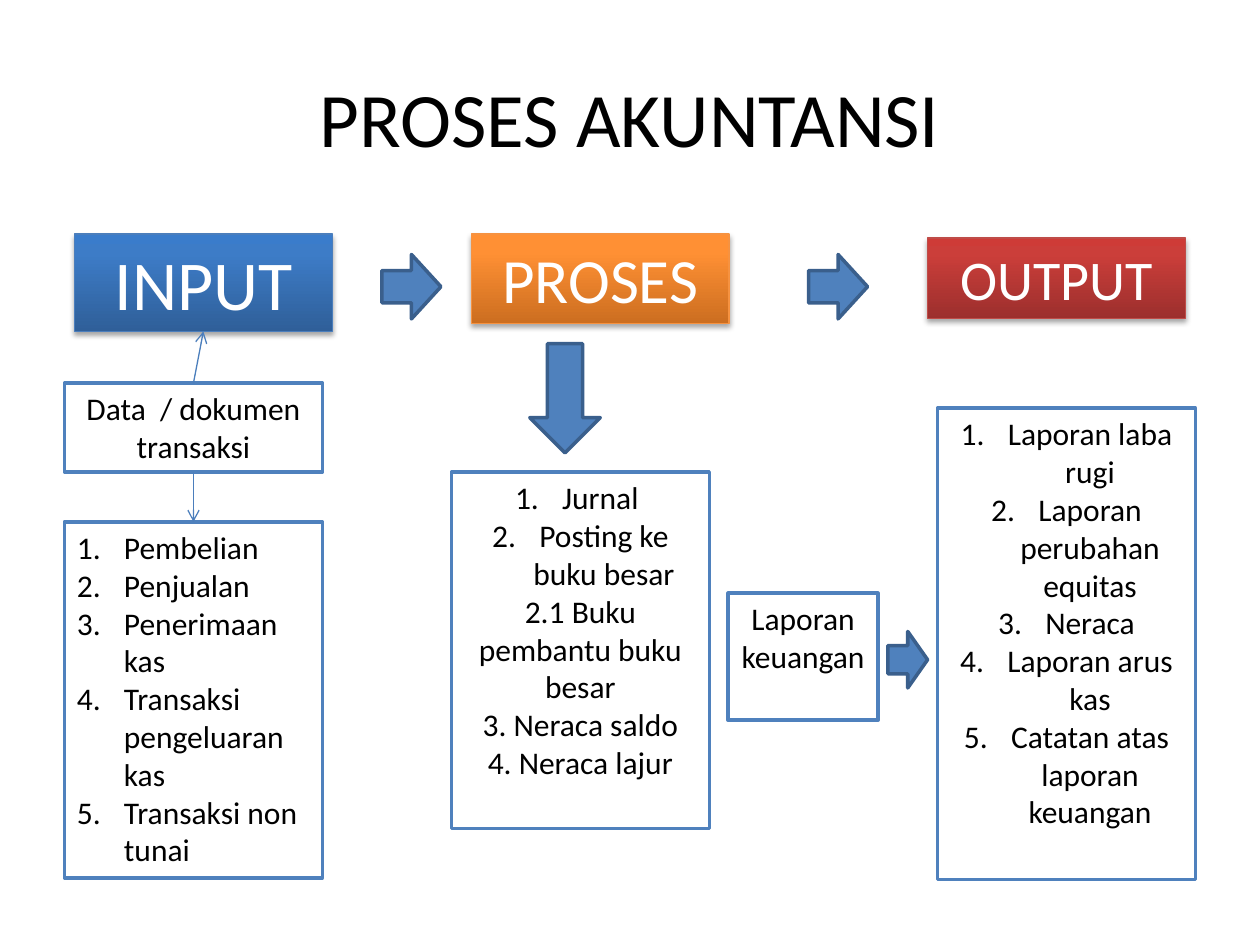
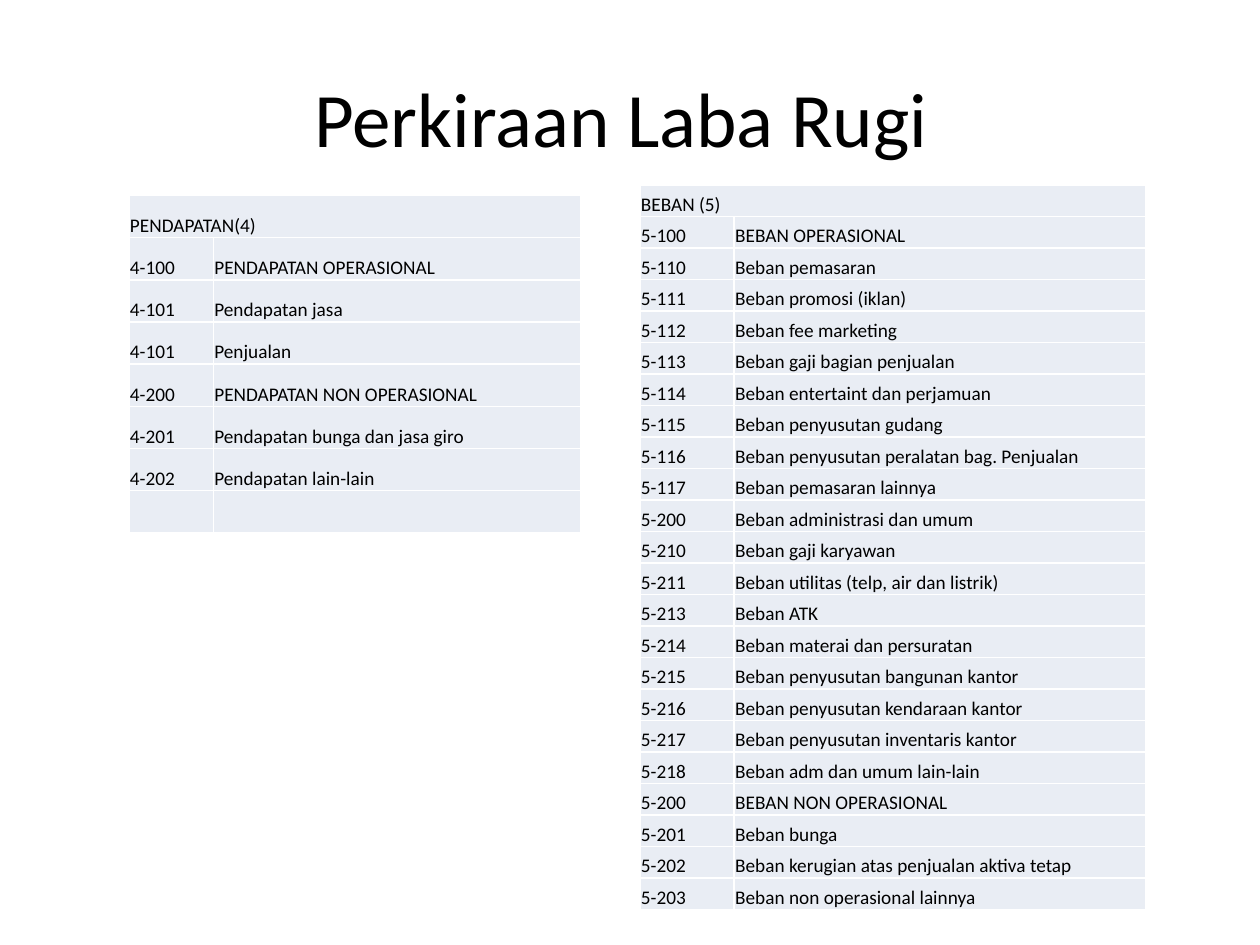
"""Builds two slides: the accounting process and the profit and loss accounts."""
import copy

import pptx
import pptx.dml.color
import pptx.enum.shapes
import pptx.enum.text
import pptx.oxml
import pptx.oxml.ns
import pptx.util

Cm = pptx.util.Cm
Pt = pptx.util.Pt
RGB = pptx.dml.color.RGBColor.from_string
KIND = pptx.enum.shapes.MSO_SHAPE
ALIGN = pptx.enum.text.PP_ALIGN
ANCHOR = pptx.enum.text.MSO_ANCHOR
qn = pptx.oxml.ns.qn
NS = pptx.oxml.ns.nsdecls("a")

HUES = {
    "text": "000000",
    "white": "FFFFFF",
    "blue": "4F81BD",
    "edge": "3A5F8C",
    "link": "4B7EBC",
    "cell": "E9EDF4",
}
FONT = "Calibri"


def write(para, text, size, hue="text", align=ALIGN.CENTER):
    para.alignment = align
    run = para.add_run()
    run.text = text
    run.font.name = FONT
    run.font.size = Pt(size)
    run.font.color.rgb = RGB(HUES[hue])


def draw(kind, spot, fill, line, width):
    shape = slide.shapes.add_shape(kind, *[Cm(n) for n in spot])
    shape.shadow.inherit = False
    shape.fill.solid()
    shape.fill.fore_color.rgb = RGB(fill)
    shape.line.color.rgb = RGB(line)
    shape.line.width = Pt(width)
    shape.text_frame.word_wrap = True
    shape.text_frame.vertical_anchor = ANCHOR.TOP
    return shape


deck = pptx.Presentation()
deck.slide_width = Cm(25.4)
deck.slide_height = Cm(19.05)

pages = []
for name in ["PROSES AKUNTANSI", "Perkiraan Laba Rugi "]:
    slide = deck.slides.add_slide(deck.slide_layouts[5])
    title = slide.shapes.title
    title.left, title.top = Cm(1.27), Cm(0.76)
    title.width, title.height = Cm(22.86), Cm(3.18)
    title.text_frame.vertical_anchor = ANCHOR.MIDDLE
    write(title.text_frame.paragraphs[0], name, 44)
    pages.append(slide)

slide = pages[0]
heads = [
    ("INPUT", 40, (1.5, 4.72, 5.2, 1.96), "4B7EBC", ["2F5F99", "3D7CC7", "3A7CCB"]),
    ("PROSES", 36, (9.5, 4.72, 5.2, 1.8), "F69240", ["CC6E20", "FF9034", "FF9136"]),
    ("OUTPUT", 32, (18.7, 4.8, 5.2, 1.62), "BF4C48", ["9C2F2D", "CB3E3A", "CE3B37"]),
]
tops = {}
for text, size, spot, line, shades in heads:
    head = draw(KIND.RECTANGLE, spot, shades[0], line, 0.75)
    head.fill.gradient()
    head.fill.gradient_angle = 90
    stops = head.element.spPr.find(qn("a:gradFill")).find(qn("a:gsLst"))
    stops.insert(1, copy.deepcopy(stops[0]))
    for stop, place, shade in zip(head.fill.gradient_stops, [0, 0.8, 1], shades):
        stop.position = place
        stop.color.rgb = RGB(shade)
    head.element.spPr.find(qn("a:effectLst")).append(pptx.oxml.parse_xml(
        f'<a:outerShdw {NS} blurRad="39400" dist="23000" dir="5400000" rotWithShape="0">'
        '<a:srgbClr val="000000"><a:alpha val="35000"/></a:srgbClr></a:outerShdw>'))
    write(head.text_frame.paragraphs[0], text, size, "white")
    tops[text] = head

arrows = [
    ((7.7, 5.13, 1.19, 1.3), 0),
    ((16.3, 5.13, 1.19, 1.3), 0),
    ((10.29, 7.32, 2.2, 1.42), 90),
    ((17.9, 12.73, 0.8, 1.14), 0),
]
for spot, turn in arrows:
    arrow = draw(KIND.RIGHT_ARROW, spot, HUES["blue"], HUES["edge"], 2)
    arrow.rotation = turn

boxes = [
    ((1.3, 7.72, 5.2, 1.8), ALIGN.CENTER, 0, ["Data  / dokumen transaksi"]),
    ((1.3, 10.52, 5.2, 7.18), ALIGN.LEFT, 5,
     ["Pembelian", "Penjualan", "Penerimaan kas", "Transaksi pengeluaran kas",
      "Transaksi non tunai"]),
    ((9.1, 9.52, 5.2, 7.18), ALIGN.CENTER, 2,
     ["Jurnal ", "Posting ke buku besar", "2.1 Buku pembantu buku besar",
      "3. Neraca saldo", "4. Neraca lajur"]),
    ((14.68, 11.96, 3.02, 2.56), ALIGN.CENTER, 0, ["Laporan keuangan"]),
    ((18.9, 8.23, 5.2, 9.5), ALIGN.CENTER, 5,
     ["Laporan laba rugi", "Laporan perubahan equitas", "Neraca", "Laporan arus kas",
      "Catatan atas laporan keuangan"]),
]
cards = []
for spot, align, count, lines in boxes:
    card = draw(KIND.RECTANGLE, spot, HUES["white"], HUES["blue"], 2)
    frame = card.text_frame
    for row, text in enumerate(lines):
        para = frame.add_paragraph() if row else frame.paragraphs[0]
        write(para, text, 18, align=align)
        if row < count:
            props = para._p.get_or_add_pPr()
            props.set("marL", str(Cm(0.95)))
            props.set("indent", str(-Cm(0.95)))
            props.append(pptx.oxml.parse_xml(f'<a:buAutoNum {NS} type="arabicPeriod"/>'))
    cards.append(card)

data, deals = cards[:2]
for start, out, end, into in [(data, 2, deals, 0), (data, 0, tops["INPUT"], 2)]:
    link = slide.shapes.add_connector(pptx.enum.shapes.MSO_CONNECTOR.STRAIGHT, 0, 0, 0, 0)
    link.begin_connect(start, out)
    link.end_connect(end, into)
    link.line.color.rgb = RGB(HUES["link"])
    link.line.width = Pt(0.75)
    link.line._get_or_add_ln().append(pptx.oxml.parse_xml(f'<a:tailEnd {NS} type="arrow"/>'))
    link.element.spPr.append(pptx.oxml.parse_xml(f"<a:effectLst {NS}/>"))

slide = pages[1]
income = [
    ("PENDAPATAN(4)", ""),
    ("4-100", "PENDAPATAN OPERASIONAL"),
    ("4-101", "Pendapatan jasa"),
    ("4-101", "Penjualan"),
    ("4-200", "PENDAPATAN NON OPERASIONAL"),
    ("4-201", "Pendapatan bunga dan jasa giro"),
    ("4-202", "Pendapatan lain-lain"),
    ("", ""),
]
costs = [
    ("BEBAN (5)", ""),
    ("5-100", "BEBAN OPERASIONAL"),
    ("5-110", "Beban pemasaran"),
    ("5-111", "Beban promosi (iklan)"),
    ("5-112", "Beban fee marketing"),
    ("5-113", "Beban gaji bagian penjualan"),
    ("5-114", "Beban entertaint dan perjamuan"),
    ("5-115", "Beban penyusutan gudang"),
    ("5-116", "Beban penyusutan peralatan bag. Penjualan"),
    ("5-117", "Beban pemasaran lainnya"),
    ("5-200", "Beban administrasi dan umum"),
    ("5-210", "Beban gaji karyawan"),
    ("5-211", "Beban utilitas (telp, air dan listrik)"),
    ("5-213", "Beban ATK"),
    ("5-214", "Beban materai dan persuratan"),
    ("5-215", "Beban penyusutan bangunan kantor"),
    ("5-216", "Beban penyusutan kendaraan kantor"),
    ("5-217", "Beban penyusutan inventaris kantor"),
    ("5-218", "Beban adm dan umum lain-lain"),
    ("5-200", "BEBAN NON OPERASIONAL"),
    ("5-201", "Beban bunga"),
    ("5-202", "Beban kerugian atas penjualan aktiva tetap"),
    ("5-203", "Beban non operasional lainnya"),
]
tables = [
    (income, 2.6, 3.94, (1.7, 7.4), 6.8),
    (costs, 12.9, 3.73, (1.9, 8.3), 14.61),
]
for rows, left, top, widths, height in tables:
    grid = slide.shapes.add_table(
        len(rows), 2, Cm(left), Cm(top), Cm(sum(widths)), Cm(height)).table
    grid.first_row = grid.horz_banding = False
    for col, width in zip(grid.columns, widths):
        col.width = Cm(width)
    for y, row in enumerate(rows):
        for x, text in enumerate(row):
            cell = grid.cell(y, x)
            cell.fill.solid()
            cell.fill.fore_color.rgb = RGB(HUES["cell"])
            cell.vertical_anchor = ANCHOR.BOTTOM
            cell.margin_left = cell.margin_right = cell.margin_top = Cm(0.02)
            cell.margin_bottom = 0
            write(cell.text_frame.paragraphs[0], text, 11, align=ALIGN.LEFT)
    grid.cell(0, 0).merge(grid.cell(0, 1))

deck.save("out.pptx")
